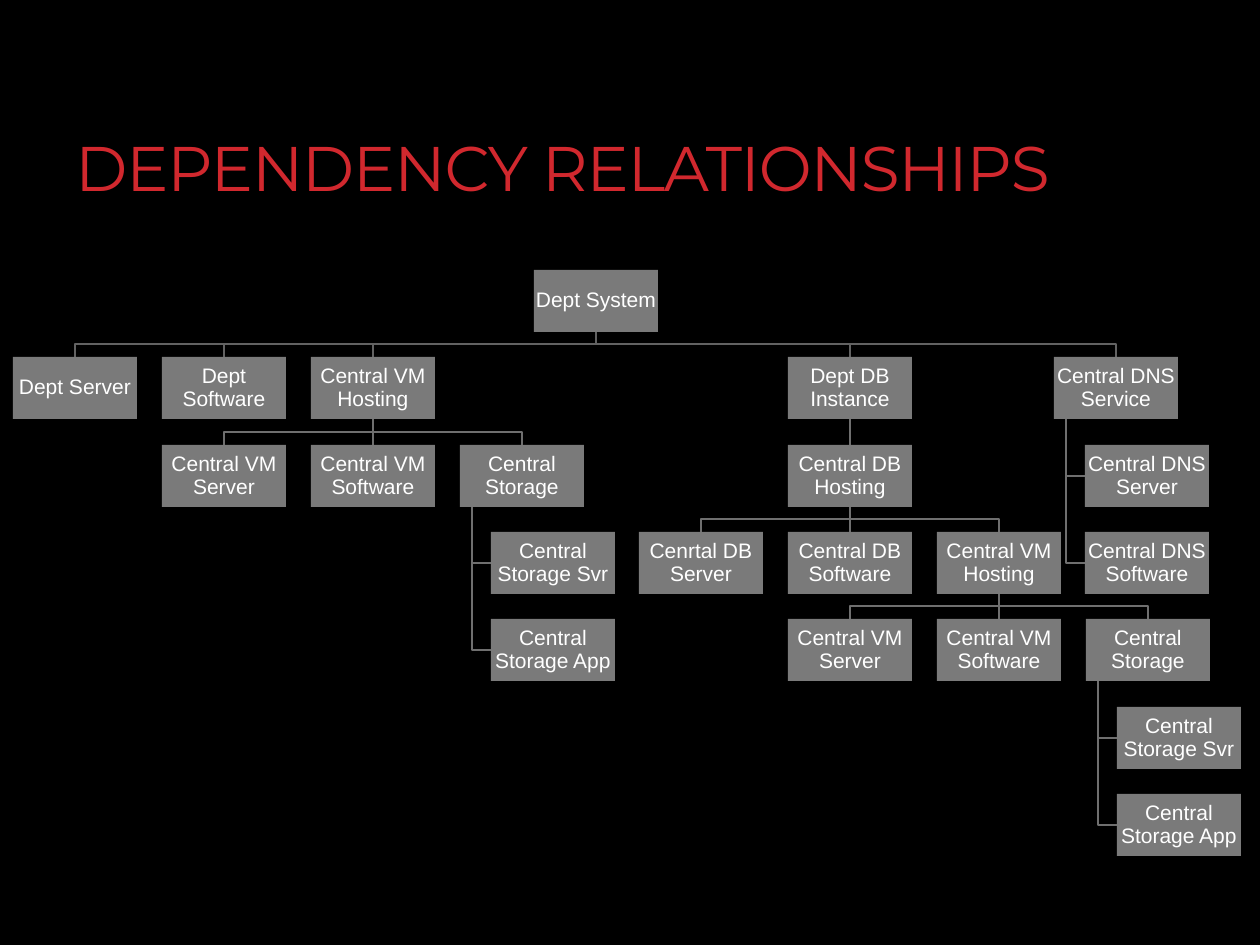
import dataclasses
import typing

import lxml.etree
import pptx
import pptx.dml.color
import pptx.enum.shapes
import pptx.enum.text
import pptx.oxml.ns
import pptx.util

PX = 914400 / 126  # EMU in one px
BOX_W, BOX_H = 124, 62
FIRST_TOP = 270
ROW_PITCH = 262 / 3
COLUMN_PITCH = 149
HANG_INDENT, HANG_STEM = 31, 12


@dataclasses.dataclass(frozen=True)
class Theme:
    background: str = "000000"
    title: str = "D1282E"
    box: str = "7A7A7A"
    label: str = "FFFFFF"
    root_link: str = "626262"
    link: str = "6F6F6F"
    title_font: str = "Montserrat"
    label_font: str = "Arial"
    title_size: int = 36
    label_size: int = 12
    link_width: int = 1


@dataclasses.dataclass(frozen=True)
class Node:
    label: str
    left: int
    children: tuple["Node", ...] = ()
    hanging: bool = False  # children stacked below, beside a stem


class Placed(typing.NamedTuple):
    node: Node
    row: int
    parent: typing.Optional["Placed"]

    @property
    def top(self) -> int:
        return FIRST_TOP + round(self.row * ROW_PITCH)

    @property
    def bottom(self) -> int:
        return self.top + BOX_H

    @property
    def center(self) -> int:
        return self.node.left + BOX_W // 2


THEME = Theme()


def emu(px: float) -> int:
    return round(px * PX)


def rgb(code: str) -> pptx.dml.color.RGBColor:
    return pptx.dml.color.RGBColor.from_string(code)


# Dependency tree
def hanging(label: str, left: int, *child_labels: str) -> Node:
    children = tuple(Node(child, left + HANG_INDENT) for child in child_labels)
    return Node(label, left, children, hanging=True)


def vm_hosting(left: int) -> Node:
    return Node("Central VM Hosting", left, (
        Node("Central VM Server", left - COLUMN_PITCH),
        Node("Central VM Software", left),
        hanging("Central Storage", left + COLUMN_PITCH,
                "Central Storage Svr", "Central Storage App"),
    ))


def db_instance(left: int) -> Node:
    hosting = Node("Central DB Hosting", left, (
        Node("Cenrtal DB Server", left - COLUMN_PITCH),
        Node("Central DB Software", left),
        vm_hosting(left + COLUMN_PITCH),
    ))
    return Node("Dept DB Instance", left, (hosting,))


FIRST_LEFT = 13
DEPT_SYSTEM = Node("Dept System", 534, (
    Node("Dept Server", FIRST_LEFT),
    Node("Dept Software", FIRST_LEFT + COLUMN_PITCH),
    vm_hosting(FIRST_LEFT + 2 * COLUMN_PITCH),
    db_instance(788),
    hanging("Central DNS Service", 1054,
            "Central DNS Server", "Central DNS Software"),
))


def place(node: Node, row: int = 0,
          parent: typing.Optional[Placed] = None) -> typing.Iterator[Placed]:
    placed = Placed(node, row, parent)
    yield placed
    for index, child in enumerate(node.children):
        yield from place(child, row + 1 + index * node.hanging, placed)


# Drawing
def draw_link(shapes, child: Placed) -> None:
    parent = child.parent
    if parent.node.hanging:
        stem = parent.node.left + HANG_STEM
        middle = child.top + BOX_H // 2
        points = [(stem, parent.bottom), (stem, middle), (child.node.left, middle)]
    else:
        bend = (parent.bottom + child.top) // 2
        points = [(parent.center, parent.bottom), (parent.center, bend),
                  (child.center, bend), (child.center, child.top)]

    if parent.center == child.center:
        ends = [emu(value) for point in (points[0], points[-1]) for value in point]
        link = shapes.add_connector(pptx.enum.shapes.MSO_CONNECTOR.STRAIGHT, *ends)
        lxml.etree.SubElement(link._element.spPr, pptx.oxml.ns.qn("a:effectLst"))
    else:
        outline = shapes.build_freeform(*points[0], scale=PX)
        outline.add_line_segments(points[1:], close=False)
        link = outline.convert_to_shape()
        link.fill.background()
        link.shadow.inherit = False
    link.line.color.rgb = rgb(THEME.link if parent.parent else THEME.root_link)
    link.line.width = pptx.util.Pt(THEME.link_width)


def add_run(paragraph, text: str, font: str, size: int, color: str):
    run = paragraph.add_run()
    run.text = text
    run.font.name = font
    run.font.size = pptx.util.Pt(size)
    run.font.color.rgb = rgb(color)
    return run


def draw_box(shapes, placed: Placed) -> None:
    box = shapes.add_shape(
        pptx.enum.shapes.MSO_SHAPE.RECTANGLE,
        emu(placed.node.left), emu(placed.top), emu(BOX_W), emu(BOX_H))
    box.shadow.inherit = False
    box.fill.solid()
    box.fill.fore_color.rgb = rgb(THEME.box)
    box.line.fill.background()
    frame = box.text_frame
    frame.word_wrap = True
    frame.vertical_anchor = pptx.enum.text.MSO_ANCHOR.MIDDLE
    frame.margin_left = frame.margin_right = emu(1)
    frame.margin_top = frame.margin_bottom = emu(1)
    paragraph = frame.paragraphs[0]
    paragraph.alignment = pptx.enum.text.PP_ALIGN.CENTER
    paragraph.line_spacing = 0.9
    add_run(paragraph, placed.node.label,
            THEME.label_font, THEME.label_size, THEME.label)


def draw_title(shapes, text: str) -> None:
    title = shapes.add_textbox(emu(63), emu(21), emu(1162), emu(189))
    frame = title.text_frame
    frame.word_wrap = True
    frame.vertical_anchor = pptx.enum.text.MSO_ANCHOR.BOTTOM
    run = add_run(frame.paragraphs[0], text,
                  THEME.title_font, THEME.title_size, THEME.title)
    run.font._element.set("spc", "-60")  # letter spacing, 1/100 pt


def main() -> None:
    deck = pptx.Presentation()
    deck.slide_width, deck.slide_height = emu(1260), emu(945)
    slide = deck.slides.add_slide(deck.slide_layouts[6])
    slide.background.fill.solid()
    slide.background.fill.fore_color.rgb = rgb(THEME.background)

    draw_title(slide.shapes, "DEPENDENCY RELATIONSHIPS")

    # Links lie behind the boxes
    systems = list(place(DEPT_SYSTEM))
    for system in systems:
        if system.parent:
            draw_link(slide.shapes, system)
    for system in systems:
        draw_box(slide.shapes, system)

    deck.save("out.pptx")


if __name__ == "__main__":
    main()
